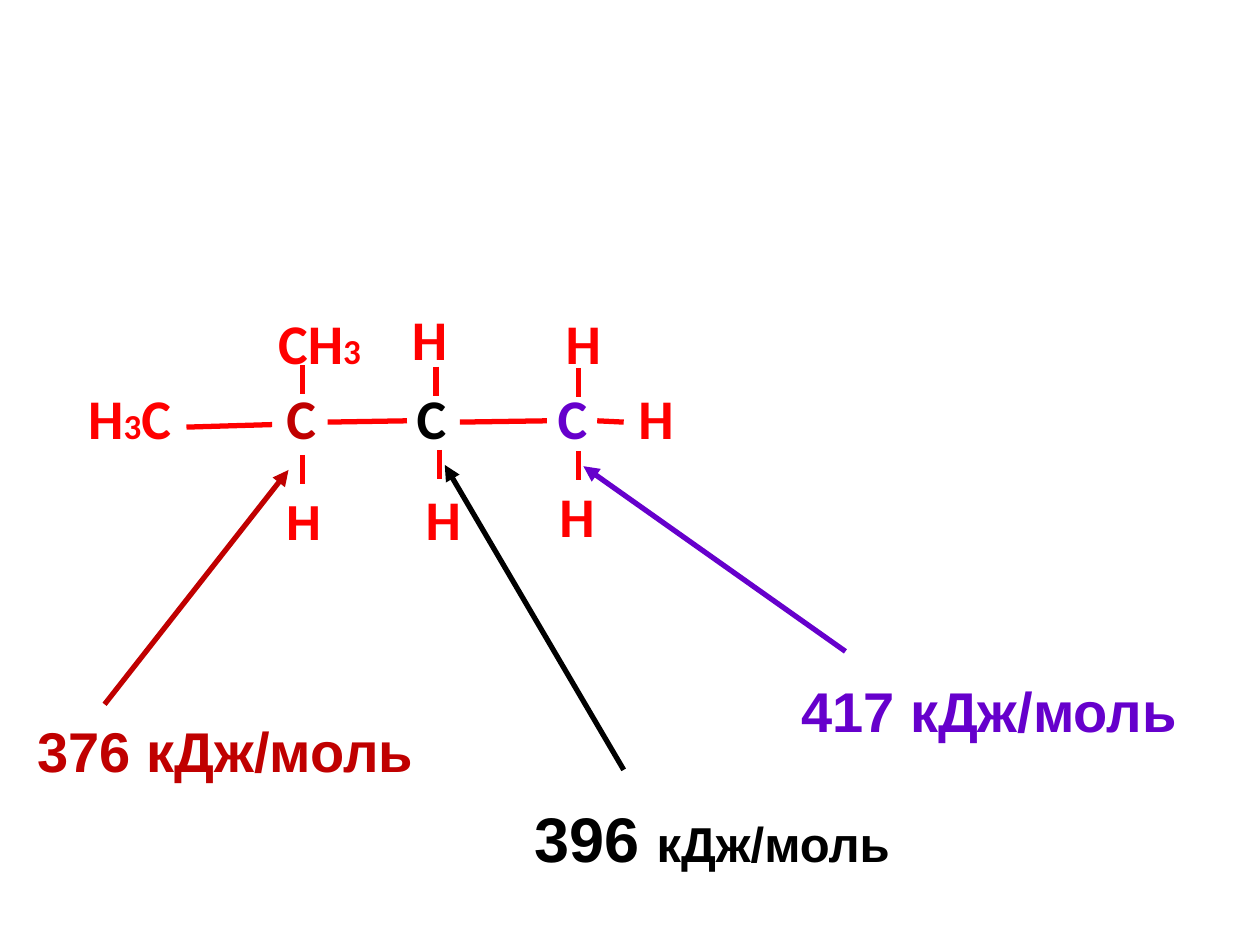
from dataclasses import dataclass

from lxml import etree
from pptx import Presentation
from pptx.dml.color import RGBColor
from pptx.enum import shapes, text
from pptx.oxml import ns
from pptx.util import Inches, Pt


@dataclass(frozen=True)
class Theme:
    red: str = "FF0000"
    crimson: str = "C00000"
    black: str = "000000"
    violet: str = "6600CC"
    white: str = "FFFFFF"
    formula_font: str = "Calibri"
    label_font: str = "Arial"
    large: int = 36
    normal: int = 32
    small: int = 28
    subscript: int = 20
    stroke: int = 3


THEME = Theme()


def add_spans(para, spans, font):
    for wording, size, color in spans:
        span = para.add_run()
        span.text = wording
        span.font.name = font
        span.font.size = Pt(size)
        span.font.bold = True
        span.font.color.rgb = RGBColor.from_string(color)


def add_label(slide, left, top, width, spans, font, height=0.64):
    box = slide.shapes.add_textbox(*map(Inches, (left, top, width, height)))
    box.text_frame.word_wrap = False
    add_spans(box.text_frame.paragraphs[0], spans, font)
    return box


def add_framed_label(slide, left, top, width, height, spans):
    box = slide.shapes.add_shape(
        shapes.MSO_SHAPE.RECTANGLE, *map(Inches, (left, top, width, height)))
    box.shadow.inherit = False
    box.fill.background()
    box.line.color.rgb = RGBColor.from_string(THEME.white)
    box.line.width = Pt(0.75)
    box.text_frame.word_wrap = False
    para = box.text_frame.paragraphs[0]
    para.alignment = text.PP_ALIGN.LEFT
    add_spans(para, spans, THEME.label_font)


def add_line(slide, start, end, color, arrow=False):
    line = slide.shapes.add_connector(
        shapes.MSO_CONNECTOR.STRAIGHT, *map(Inches, start + end))
    line.line.color.rgb = RGBColor.from_string(color)
    line.line.width = Pt(THEME.stroke)
    if arrow:
        etree.SubElement(line.line._get_or_add_ln(), ns.qn("a:tailEnd"), type="triangle")
    etree.SubElement(line._element.spPr, ns.qn("a:effectLst"))


def fill_chain(body):
    body.left, body.top, body.width, body.height = map(Inches, (0.5, 1.75, 9, 4.95))
    frame = body.text_frame
    frame.auto_size = text.MSO_AUTO_SIZE.NONE
    frame.margin_left = Inches(0.2)
    frame.margin_top = Inches(1.29)
    para = frame.paragraphs[0]
    para.space_before = Pt(0)
    props = para._p.get_or_add_pPr()
    props.set("marL", "0")
    props.set("indent", "0")
    etree.SubElement(props, ns.qn("a:buNone"))
    add_spans(para, [
        ("H", THEME.normal, THEME.red),
        ("3", THEME.subscript, THEME.red),
        ("C", THEME.normal, THEME.red),
        ("C", THEME.normal, THEME.crimson),
        ("C", THEME.normal, THEME.black),
        ("C", THEME.normal, THEME.violet),
        ("H", THEME.normal, THEME.red),
    ], THEME.formula_font)
    for carbon, gap in zip(para.runs[2:6], (66, 57.4, 63.7, 29.2)):
        carbon.font._element.set("spc", str(round(gap * 100)))


def add_bonds(slide):
    for x, top in ((2.4, 2.9), (3.46, 2.91), (4.59, 2.92),
                   (2.4, 3.61), (3.49, 3.57), (4.59, 3.58)):
        add_line(slide, (x, top), (x, top + 0.23), THEME.red)
    for start, end in (((1.48, 3.39), (2.16, 3.37)), ((2.6, 3.35), (3.23, 3.34)),
                       ((3.65, 3.35), (4.34, 3.34)), ((4.74, 3.34), (4.95, 3.35))):
        add_line(slide, start, end, THEME.red)


def add_atoms(slide):
    hydrogen = ("H", THEME.normal, THEME.red)
    for left, top in ((3.17, 2.37), (4.39, 2.4), (3.28, 3.8), (4.34, 3.77)):
        add_label(slide, left, top, 0.49, [hydrogen], THEME.formula_font)
    methyl = [("CH", THEME.normal, THEME.red), ("3", THEME.subscript, THEME.red)]
    add_label(slide, 2.11, 2.4, 0.87, methyl, THEME.formula_font)
    tertiary = add_label(slide, 1.92, 3.8, 0.73,
                         [("H", THEME.small, THEME.red)], THEME.label_font)
    tertiary.text_frame.margin_left = Inches(0.35)
    tertiary.text_frame.margin_top = Inches(0.1)


def add_energies(slide):
    for left, top, wording, color in ((0.2, 5.64, "376 кДж/моль", THEME.crimson),
                                      (6.26, 5.32, "417 кДж/моль", THEME.violet)):
        add_label(slide, left, top, 3.21,
                  [(wording, THEME.normal, color)], THEME.label_font)
    add_framed_label(slide, 4.14, 6.29, 3.06, 0.71, [
        ("396 ", THEME.large, THEME.black), ("кДж/моль", THEME.small, THEME.black)])
    for start, end, color in (((0.83, 5.59), (2.29, 3.73), THEME.crimson),
                              ((4.95, 6.11), (3.53, 3.69), THEME.black),
                              ((6.71, 5.17), (4.63, 3.7), THEME.violet)):
        add_line(slide, start, end, color, arrow=True)


def main():
    deck = Presentation()
    deck.slide_width, deck.slide_height = Inches(10), Inches(7.5)
    slide = deck.slides.add_slide(deck.slide_layouts[1])
    title = slide.shapes.title._element
    title.getparent().remove(title)
    fill_chain(slide.placeholders[1])
    add_bonds(slide)
    add_atoms(slide)
    add_energies(slide)
    deck.save("out.pptx")


if __name__ == "__main__":
    main()
